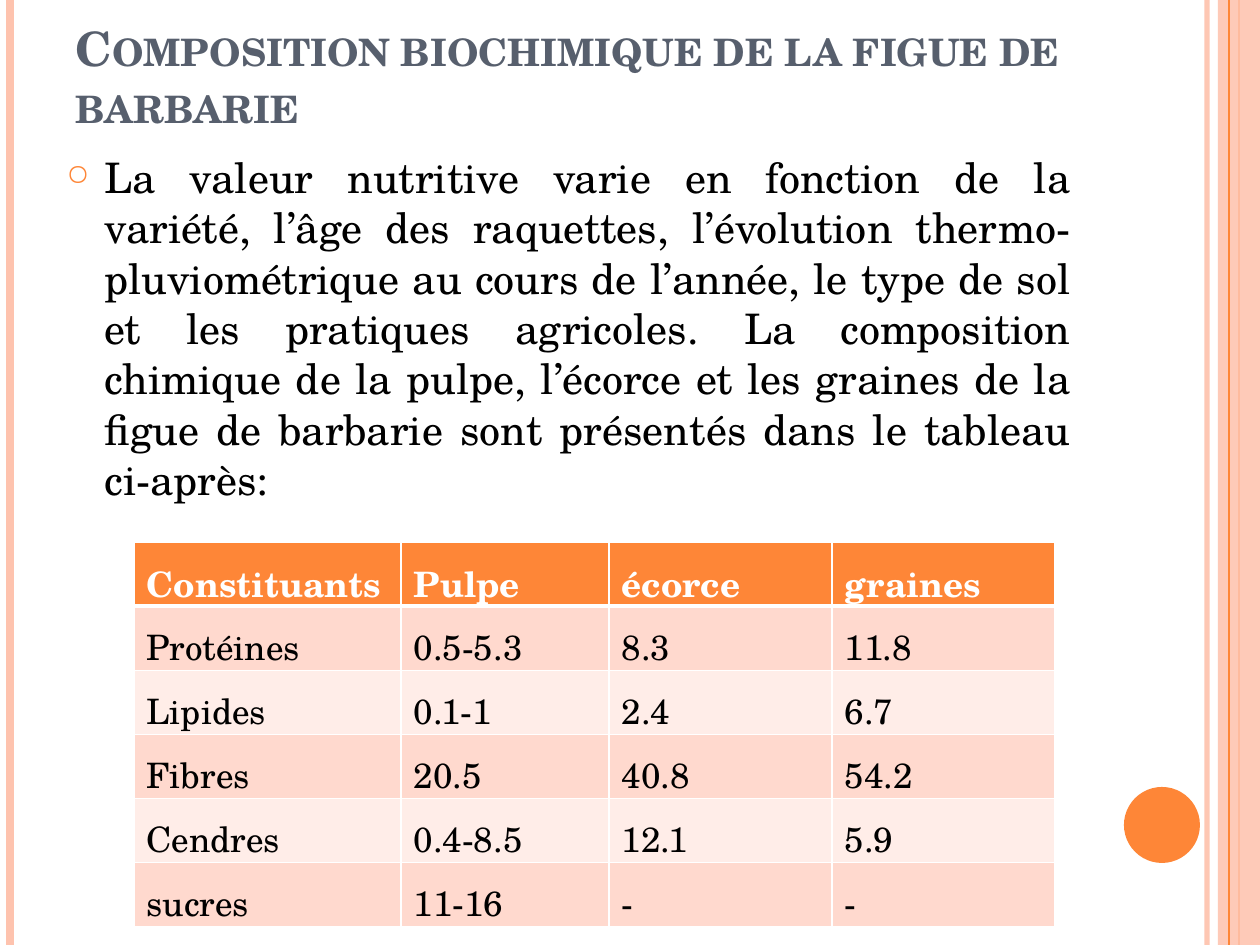
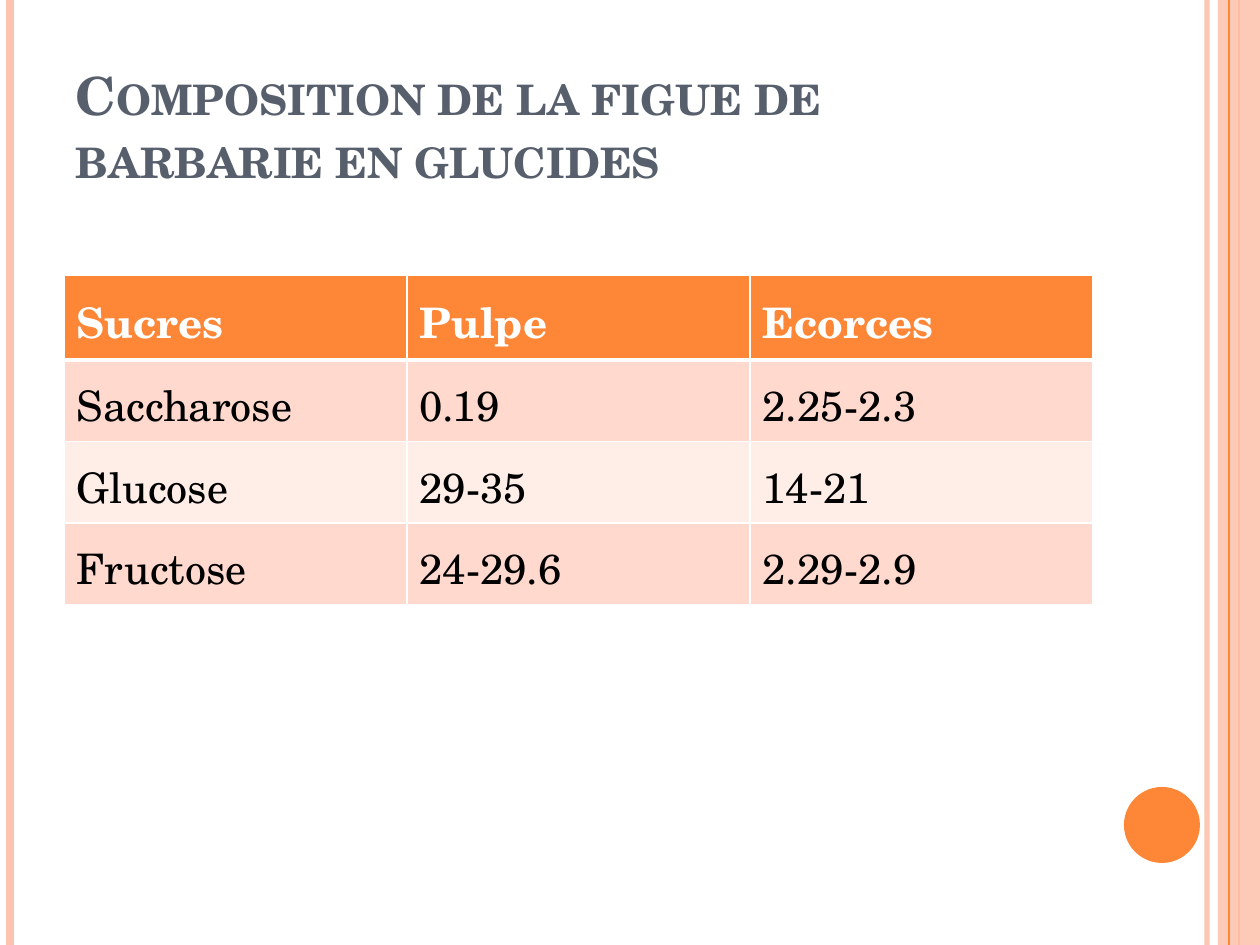
import pptx
import pptx.dml.color
import pptx.enum.shapes
import pptx.enum.text
import pptx.oxml
import pptx.oxml.ns
import pptx.util

# Content
TITLE_BOX = (63, 38, 1029, 157)
SLIDES = [
    {
        "title": "Composition biochimique de la figue de barbarie",
        "title_size": 27,
        "title_bottom": 62,
        "body": "La valeur nutritive varie en fonction de la variété, l’âge des "
                "raquettes, l’évolution thermo-pluviométrique au cours de l’année, "
                "le type de sol et les pratiques agricoles. La composition chimique "
                "de la pulpe, l’écorce et les graines de la figue de barbarie sont "
                "présentés dans le tableau ci-après:",
        "table": {
            "left": 134, "top": 542, "height": 385, "size": 20,
            "columns": [267, 208, 223, 223],
            "rows": [
                ("Constituants", "Pulpe", "écorce", "graines"),
                ("Protéines", "0.5-5.3", "8.3", "11.8"),
                ("Lipides", "0.1-1", "2.4", "6.7"),
                ("Fibres", "20.5", "40.8", "54.2"),
                ("Cendres", "0.4-8.5", "12.1", "5.9"),
                ("sucres", "11-16", "-", "-"),
            ],
        },
    },
    {
        "title": "Composition de la figue de barbarie en glucides",
        "title_size": 30,
        "title_bottom": 6,
        "body": None,
        "table": {
            "left": 64, "top": 275, "height": 307, "size": 24,
            "columns": [343, 343, 343],
            "rows": [
                ("Sucres", "Pulpe", "Ecorces"),
                ("Saccharose", "0.19", "2.25-2.3"),
                ("Glucose", "29-35", "14-21"),
                ("Fructose", "24-29.6", "2.29-2.9"),
            ],
        },
    },
]

# Shared style
FONT = "TeX Gyre Schola"
ORANGE, PEACH, SLATE = "FE8637", "FEC3AE", "575F6D"
BLACK, WHITE = "000000", "FFFFFF"
ROW_FILLS = ("FFD9CE", "FFEDE8")
WIDTH, HEIGHT = 1260, 945
BODY_BOX = (54, 145, 1029, 751)
BULLET_INDENT = 38
# x, colour, width in points, opacity in percent
LINES_BEHIND = [(1207, PEACH, 3, 93), (10, PEACH, 4.5, 100), (1239, ORANGE, 1.5, 100)]
LINES_FRONT = [(1229, ORANGE, 0.75, 100)]
BAND = (1218, 0, 42, HEIGHT)
DISC = (1124, 787, 76, 76)


def px(length):
    return pptx.util.Emu(round(length * 914400 / 126))


def rgb(color):
    return pptx.dml.color.RGBColor.from_string(color)


def element(xml):
    return pptx.oxml.parse_xml(xml.replace(" ", f" {pptx.oxml.ns.nsdecls('a')} ", 1))


def set_opacity(part, percent):
    if percent < 100:
        for color in part.iter(pptx.oxml.ns.qn("a:srgbClr")):
            color.append(element(f'<a:alpha val="{percent * 1000}"/>'))


def add_span(para, text, size, color, bold=False):
    span = para.add_run()
    span.text = text
    span.font.name = FONT
    span.font.size = pptx.util.Pt(size)
    span.font.bold = bold
    span.font.color.rgb = rgb(color)
    return span


# Side bands and disc
def add_rules(page, rules):
    for x, color, width, opacity in rules:
        rule = page.shapes.add_connector(
            pptx.enum.shapes.MSO_CONNECTOR.STRAIGHT, px(x), 0, px(x), px(HEIGHT))
        rule.line.color.rgb = rgb(color)
        rule.line.width = pptx.util.Pt(width)
        properties = rule._element.spPr
        set_opacity(properties, opacity)
        properties.append(element("<a:effectLst />"))


def add_plain_shape(page, kind, place, color, opacity=100):
    shape = page.shapes.add_shape(kind, *map(px, place))
    shape.shadow.inherit = False
    shape.fill.solid()
    shape.fill.fore_color.rgb = rgb(color)
    shape.line.fill.background()
    set_opacity(shape._element.spPr, opacity)


def add_decor(page):
    kinds = pptx.enum.shapes.MSO_SHAPE
    add_rules(page, LINES_BEHIND)
    add_plain_shape(page, kinds.RECTANGLE, BAND, PEACH, 87)
    add_rules(page, LINES_FRONT)
    add_plain_shape(page, kinds.OVAL, DISC, ORANGE)


# Title and body text
def set_title(page, text, size, bottom):
    title = page.shapes.title
    title.left, title.top, title.width, title.height = map(px, TITLE_BOX)
    frame = title.text_frame
    frame.word_wrap = True
    frame.auto_size = pptx.enum.text.MSO_AUTO_SIZE.NONE
    frame.vertical_anchor = pptx.enum.text.MSO_ANCHOR.BOTTOM
    frame.margin_bottom = px(bottom)
    para = frame.paragraphs[0]
    para.alignment = pptx.enum.text.PP_ALIGN.LEFT
    span = add_span(para, text, size, SLATE, bold=True)
    span.font._element.set("cap", "small")


def add_body(page, text):
    box = page.shapes.add_textbox(*map(px, BODY_BOX))
    box.text_frame.word_wrap = True
    para = box.text_frame.paragraphs[0]
    para.alignment = pptx.enum.text.PP_ALIGN.JUSTIFY
    para.space_before = pptx.util.Pt(6)
    properties = para._p.get_or_add_pPr()
    properties.set("marL", str(px(BULLET_INDENT)))
    properties.set("indent", str(-px(BULLET_INDENT)))
    for xml in (f'<a:buClr ><a:srgbClr val="{ORANGE}"/></a:buClr>',
                '<a:buSzPct val="70000"/>',
                '<a:buChar char="○"/>'):
        properties.append(element(xml))
    add_span(para, text, 24, BLACK)


# Tables
def set_borders(cell, row):
    widths = {"L": 1, "R": 1, "T": 3 if row == 1 else 1, "B": 3 if row == 0 else 1}
    for side, width in widths.items():
        cell._tc.get_or_add_tcPr().append(element(
            f'<a:ln{side} w="{pptx.util.Pt(width)}"><a:solidFill>'
            f'<a:srgbClr val="{WHITE}"/></a:solidFill></a:ln{side}>'))


def add_data_table(page, left, top, height, size, columns, rows):
    table = page.shapes.add_table(
        len(rows), len(columns), px(left), px(top), px(sum(columns)), px(height)).table
    for column, width in zip(table.columns, columns):
        column.width = px(width)
    for r, values in enumerate(rows):
        header = r == 0
        table.rows[r].height = px(height / len(rows))
        for c, value in enumerate(values):
            cell = table.cell(r, c)
            set_borders(cell, r)
            cell.fill.solid()
            cell.fill.fore_color.rgb = rgb(ORANGE if header else ROW_FILLS[(r - 1) % 2])
            cell.margin_top, cell.margin_bottom = px(14), px(6)
            add_span(cell.text_frame.paragraphs[0], value, size,
                     WHITE if header else BLACK, bold=header)


def main():
    deck = pptx.Presentation()
    deck.slide_width, deck.slide_height = px(WIDTH), px(HEIGHT)
    title_only = deck.slide_layouts[5]
    for content in SLIDES:
        page = deck.slides.add_slide(title_only)
        add_decor(page)
        set_title(page, content["title"], content["title_size"], content["title_bottom"])
        if content["body"]:
            add_body(page, content["body"])
        add_data_table(page, **content["table"])
    deck.save("out.pptx")


if __name__ == "__main__":
    main()
